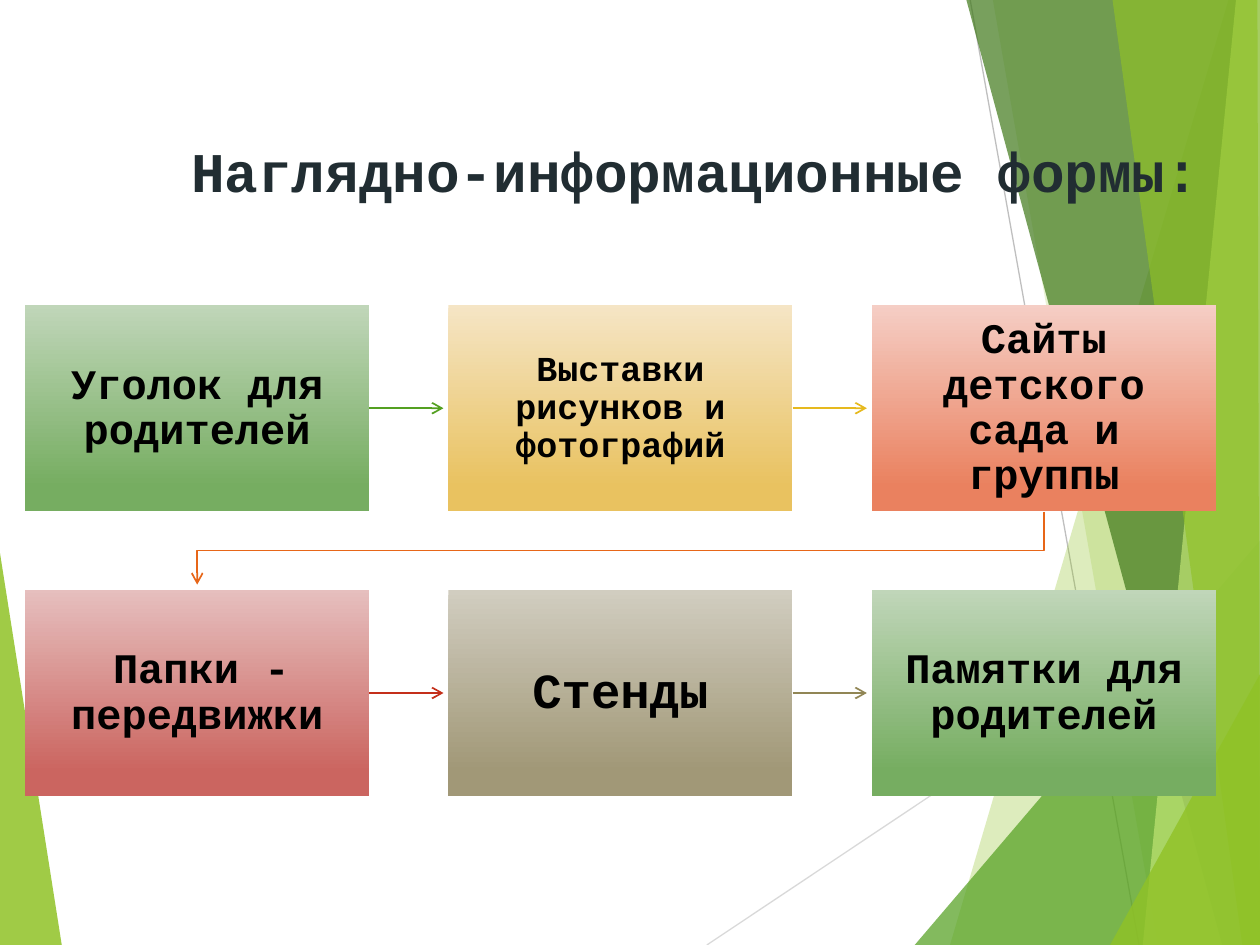
from dataclasses import dataclass

import pptx
import pptx.dml.color
import pptx.enum.shapes
import pptx.enum.text
import pptx.oxml
import pptx.oxml.ns
import pptx.util
from lxml import etree

Inches = pptx.util.Inches
Point = tuple[float, float]


@dataclass(frozen=True)
class Theme:
    font: str = "Courier New"
    space_font: str = "Lato"
    title_color: str = "212D32"
    text_color: str = "000000"
    title_size: int = 32
    title_space_size: int = 40
    box_space_size: int = 18
    arrow_width: float = 1
    hairline_width: float = 0.75
    lime: str = "90C226"
    pale_lime: str = "C0E474"
    green: str = "54A021"
    dark_green: str = "3F7819"


@dataclass(frozen=True)
class Facet:
    color: str
    opacity: int
    points: tuple[Point, ...]


@dataclass(frozen=True)
class Hairline:
    color: str
    start: Point
    end: Point


@dataclass(frozen=True)
class Step:
    text: str
    top_color: str
    bottom_color: str
    size: int = 24
    inset: float = 0.19
    arrow_color: str = ""
    leading_space: bool = False


THEME = Theme()

# Grid of steps
COLUMNS = 3
LEFT, TOP = 0.2, 2.42
BOX_WIDTH, BOX_HEIGHT = 2.73, 1.64
PITCH_X, PITCH_Y = 3.36, 2.26
ARROW_GAP = 0.04

FACETS_BEHIND = [
    Facet(THEME.lime, 85, ((0, 4.39), (0.49, 7.5), (0, 7.5))),
]
HAIRLINES = [
    Hairline("D9D9D9", (5.61, 7.5), (10, 4.57)),
    Hairline("BFBFBF", (7.7, 0), (9.04, 7.5)),
]
FACETS_RIGHT = [
    Facet(THEME.lime, 30, ((9.75, 0), (7.54, 7.5), (10, 7.5), (10, 0))),
    Facet(THEME.lime, 20, ((7.88, 0), (9.19, 7.5), (10, 7.5), (10, 0))),
    Facet(THEME.green, 72, ((7.26, 7.5), (10, 4.29), (10, 7.5))),
    Facet(THEME.dark_green, 70, ((7.67, 0), (9.7, 7.5), (10, 7.5), (10, 0))),
    Facet(THEME.pale_lime, 70, ((9.81, 0), (9.07, 7.5), (10, 7.5), (10, 0))),
    Facet(THEME.lime, 65, ((8.83, 0), (9.86, 7.5), (10, 7.5), (9.98, 0))),
    Facet(THEME.lime, 80, ((8.81, 7.5), (10, 5.35), (10, 7.5))),
]
STEPS = [
    Step("Уголок для родителей", "C0D6B9", "76AD61", arrow_color="54A021"),
    Step("Выставки рисунков и фотографий", "F5E5C5", "E9C260", 20, 0.16, "E6B91E"),
    Step("Сайты детского сада и группы", "F5CEC5", "EA815F", arrow_color="E76618"),
    Step("Папки - передвижки", "E6BFBE", "CB6560", 24, 0.14, "C42F1A", True),
    Step("Стенды", "D1CDC0", "A19877", 28, 0.22, "918655"),
    Step("Памятки для родителей", "C0D6B9", "76AD61"),
]


def rgb(color: str) -> pptx.dml.color.RGBColor:
    return pptx.dml.color.RGBColor.from_string(color)


def add_path(slide, points: tuple[Point, ...], close: bool):
    corners = [(Inches(x), Inches(y)) for x, y in points]
    builder = slide.shapes.build_freeform(*corners[0])
    builder.add_line_segments(corners[1:], close=close)
    shape = builder.convert_to_shape()
    shape.shadow.inherit = False
    return shape


def add_facet(slide, facet: Facet) -> None:
    shape = add_path(slide, facet.points, close=True)
    shape.line.fill.background()
    shape.fill.solid()
    shape.fill.fore_color.rgb = rgb(facet.color)
    color = shape._element.spPr.find(".//" + pptx.oxml.ns.qn("a:srgbClr"))
    alpha = etree.SubElement(color, pptx.oxml.ns.qn("a:alpha"))
    alpha.set("val", str(facet.opacity * 1000))


def add_line(slide, start: Point, end: Point, color: str, width: float):
    connector = slide.shapes.add_connector(
        pptx.enum.shapes.MSO_CONNECTOR.STRAIGHT, *map(Inches, start + end))
    connector.line.color.rgb = rgb(color)
    connector.line.width = pptx.util.Pt(width)
    etree.SubElement(connector._element.spPr, pptx.oxml.ns.qn("a:effectLst"))
    return connector


def add_arrowhead(shape) -> None:
    line = shape.line._get_or_add_ln()
    etree.SubElement(line, pptx.oxml.ns.qn("a:tailEnd")).set("type", "arrow")


def add_run(paragraph, text: str, font: str, size: int, color: str, bold: bool = True) -> None:
    run = paragraph.add_run()
    run.text = text
    run.font.name = font
    run.font.size = pptx.util.Pt(size)
    run.font.bold = bold
    run.font.color.rgb = rgb(color)


def add_title(slide, text: str) -> None:
    frame = slide.shapes.add_textbox(
        Inches(0.67), Inches(0.92), Inches(9.57), Inches(0.39)).text_frame
    frame.word_wrap = True
    paragraph = frame.paragraphs[0]
    paragraph.alignment = pptx.enum.text.PP_ALIGN.CENTER
    add_run(paragraph, " ", THEME.space_font, THEME.title_space_size, THEME.title_color)
    add_run(paragraph, text, THEME.font, THEME.title_size, THEME.title_color)


def add_step(slide, step: Step, left: float, top: float) -> None:
    shape = slide.shapes.add_shape(
        pptx.enum.shapes.MSO_SHAPE.RECTANGLE,
        Inches(left), Inches(top), Inches(BOX_WIDTH), Inches(BOX_HEIGHT))
    shape.shadow.inherit = False
    shape.line.fill.background()
    shape.fill.gradient()
    shape.fill.gradient_angle = 270
    first, last = shape.fill.gradient_stops
    first.color.rgb, first.position = rgb(step.top_color), 0
    last.color.rgb, last.position = rgb(step.bottom_color), 0.88

    frame = shape.text_frame
    frame.word_wrap = True
    frame.vertical_anchor = pptx.enum.text.MSO_ANCHOR.MIDDLE
    frame.margin_left = frame.margin_right = Inches(step.inset)
    frame.margin_top = frame.margin_bottom = Inches(step.inset)
    paragraph = frame.paragraphs[0]
    paragraph.alignment = pptx.enum.text.PP_ALIGN.CENTER
    paragraph.line_spacing = 0.9
    if step.leading_space:
        add_run(paragraph, " ", THEME.space_font, THEME.box_space_size,
                THEME.text_color, bold=False)
    add_run(paragraph, step.text, THEME.font, step.size, THEME.text_color)


def add_step_arrow(slide, step: Step, column: int, left: float, top: float) -> None:
    if column < COLUMNS - 1:
        middle = top + BOX_HEIGHT / 2
        arrow = add_line(slide, (left + BOX_WIDTH, middle),
                         (left + PITCH_X - ARROW_GAP, middle),
                         step.arrow_color, THEME.arrow_width)
    else:
        # Elbow back to the first column of the next row
        start_x, end_x = left + BOX_WIDTH / 2, LEFT + BOX_WIDTH / 2
        bottom, next_top = top + BOX_HEIGHT, top + PITCH_Y
        turn = (bottom + next_top) / 2
        arrow = add_path(slide, ((start_x, bottom), (start_x, turn), (end_x, turn),
                                 (end_x, next_top - ARROW_GAP)), close=False)
        arrow.fill.background()
        arrow.line.color.rgb = rgb(step.arrow_color)
        arrow.line.width = pptx.util.Pt(THEME.arrow_width)
    add_arrowhead(arrow)


def main() -> None:
    presentation = pptx.Presentation()
    presentation.slide_width, presentation.slide_height = Inches(10), Inches(7.5)
    slide = presentation.slides.add_slide(presentation.slide_layouts[6])

    # Background facets
    for facet in FACETS_BEHIND:
        add_facet(slide, facet)
    for hairline in HAIRLINES:
        add_line(slide, hairline.start, hairline.end, hairline.color, THEME.hairline_width)
    for facet in FACETS_RIGHT:
        add_facet(slide, facet)

    # Title and process
    add_title(slide, "Наглядно-информационные формы:")
    for index, step in enumerate(STEPS):
        row, column = divmod(index, COLUMNS)
        left, top = LEFT + column * PITCH_X, TOP + row * PITCH_Y
        if step.arrow_color:
            add_step_arrow(slide, step, column, left, top)
        add_step(slide, step, left, top)

    presentation.save("out.pptx")


if __name__ == "__main__":
    main()
